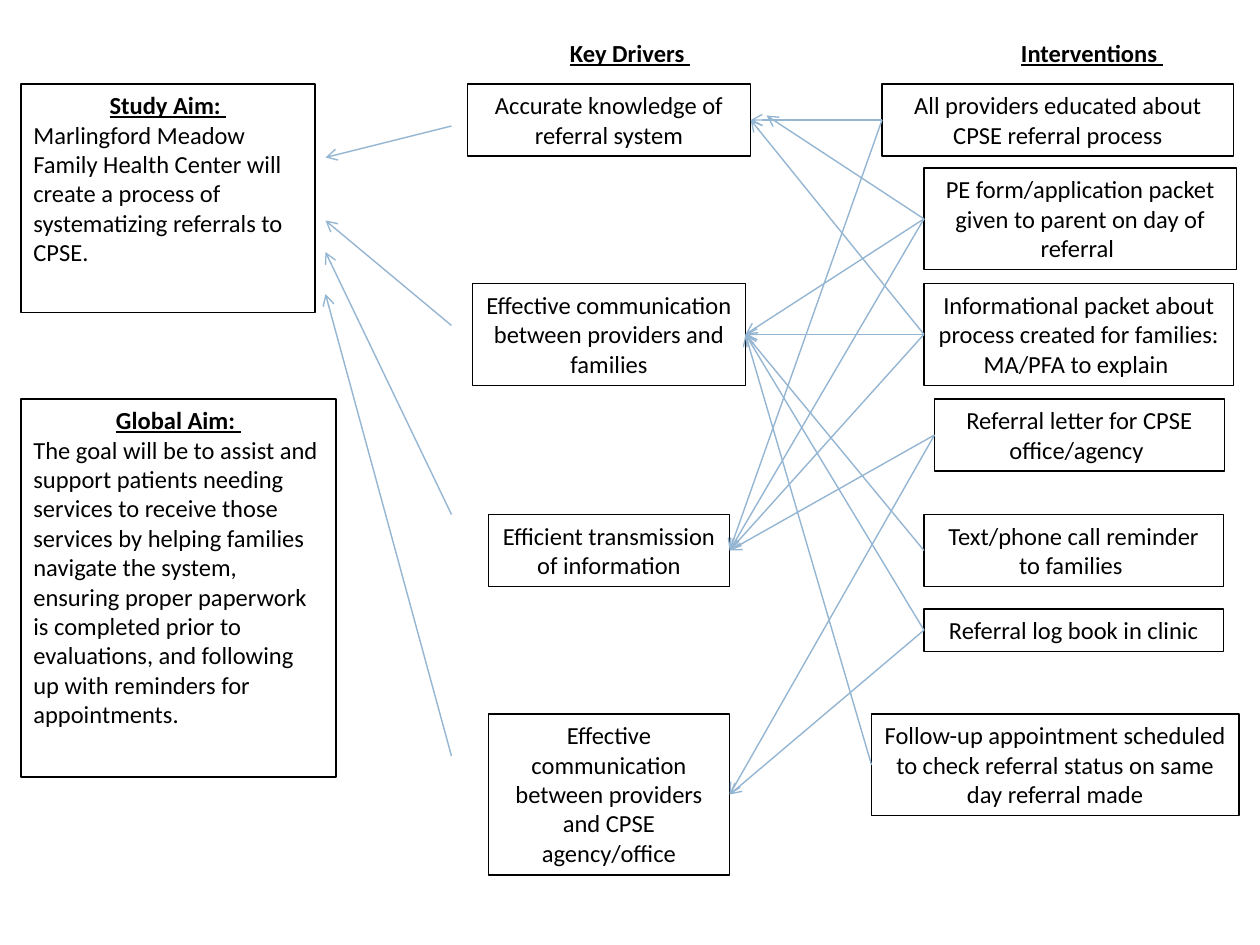
from lxml import etree
from pptx import Presentation
from pptx import util as u
from pptx.dml.color import RGBColor
from pptx.enum import shapes, text
from pptx.oxml import ns

BLACK = RGBColor(0, 0, 0)
BLUE = RGBColor(0x94, 0xB6, 0xD2)
UNIT = u.Inches(1) // 12
LEFT, RIGHT = 1, 3

AIMS = [
    (0, 28, 21.8, "Study Aim: ",
     "Marlingford Meadow Family Health Center will create a process of "
     "systematizing referrals to CPSE."),
    (30, 30, 36, "Global Aim: ",
     "The goal will be to assist and support patients needing services to "
     "receive those services by helping families navigate the system, "
     "ensuring proper paperwork is completed prior to evaluations, and "
     "following up with reminders for appointments."),
]
DRIVERS = [
    (5, 27, 2, "Accurate knowledge of referral system"),
    (24, 26, 3, "Effective communication between providers and families"),
    (46, 23, 2, "Efficient transmission of information"),
    (65, 23, 5, "Effective communication between providers and CPSE agency/office"),
]
ACTIONS = [
    (1, 5, 33.5, 2, "All providers educated about CPSE referral process"),
    (5, 13, 29.75, 3, "PE form/application packet given to parent on day of referral "),
    (5, 24, 29.5, 3, "Informational packet about process created for families: "
     "MA/PFA to explain "),
    (6, 35, 27.6, 2, "Referral letter for CPSE office/agency "),
    (5, 46, 28.5, 2, "Text/phone call reminder to families "),
    (5, 55, 28.5, 1, "Referral log book in clinic"),
    (0, 65, 35, 3, "Follow-up appointment scheduled to check referral status "
     "on same day referral made"),
]
LINKS = {0: (0, 2), 1: (1, 2, 4, 5, 6), 2: (0, 1, 2, 3), 3: (3, 5)}


def grid(*vals):
    """Turn grid steps into slide lengths."""
    return [u.Emu(round(v * UNIT)) for v in vals]


def tall(lines):
    """Give the height in grid steps of a box with this many lines."""
    return 1.2 + 2.83 * lines


def write(frame, words, bold=False, center=True, first=True):
    """Add one paragraph with one run."""
    para = frame.paragraphs[0] if first else frame.add_paragraph()
    para.alignment = text.PP_ALIGN.CENTER if center else text.PP_ALIGN.LEFT
    run = para.add_run()
    run.text = words
    font = run.font
    font.name, font.size = "Calibri", u.Pt(14)
    font.bold = font.underline = bold
    font.color.rgb = BLACK


def card(slide, box):
    """Draw an outlined box ready for text."""
    rect = slide.shapes.add_shape(shapes.MSO_SHAPE.RECTANGLE, *grid(*box))
    rect.shadow.inherit = False
    rect.fill.background()
    rect.line.color.rgb = BLACK
    rect.line.width = u.Pt(0.75)
    rect.text_frame.word_wrap = True
    rect.text_frame.vertical_anchor = text.MSO_ANCHOR.TOP
    return rect


def title(slide, box, words):
    """Place a column heading."""
    frame = slide.shapes.add_textbox(*grid(*box)).text_frame
    frame.word_wrap = True
    write(frame, words, bold=True)


def arrow(slide, start=(0, 0), end=(0, 0)):
    """Draw a thin arrow between two grid points."""
    line = slide.shapes.add_connector(
        shapes.MSO_CONNECTOR.STRAIGHT, *grid(*start, *end))
    line.line.color.rgb = BLUE
    line.line.width = u.Pt(0.79)
    props = line.element.spPr
    etree.SubElement(props.find(ns.qn("a:ln")), ns.qn("a:tailEnd"), type="arrow")
    etree.SubElement(props, ns.qn("a:effectLst"))
    return line


def aims(slide, box):
    """Fill the column of aims."""
    x, y = box
    for down, wide, high, head, body in AIMS:
        frame = card(slide, (x, y + down, wide, high)).text_frame
        write(frame, head, bold=True)
        write(frame, body, center=False, first=False)


def drivers(slide, box):
    """Fill the column of drivers, each centred in it."""
    x, y, width = box
    title(slide, (x + 1.5, y, 28, tall(1)), "Key Drivers ")
    cards = []
    for down, wide, lines, words in DRIVERS:
        rect = card(slide, (x + (width - wide) / 2, y + down, wide, tall(lines)))
        write(rect.text_frame, words)
        cards.append(rect)
    return cards


def actions(slide, box):
    """Fill the column of interventions."""
    x, y = box
    title(slide, (x + 9, y, 24, tall(1)), "Interventions ")
    cards = []
    for right, down, wide, lines, words in ACTIONS:
        rect = card(slide, (x + right, y + down, wide, tall(lines)))
        write(rect.text_frame, words)
        cards.append(rect)
    return cards


def goals(slide, box):
    """Point the drivers at the aims across a gap."""
    x, y, width = box
    for start, end in ((0, 3), (19, 9), (37, 12), (60, 16)):
        arrow(slide, (x + width, y + start), (x, y + end))


def links(slide, causes, steps):
    """Join interventions to the drivers they serve."""
    for goal, parts in LINKS.items():
        for part in parts:
            line = arrow(slide)
            line.begin_connect(steps[part], LEFT)
            line.end_connect(causes[goal], RIGHT)
    arrow(slide, end=(73, 11)).begin_connect(steps[1], LEFT)


def main():
    """Build and save the slide."""
    deck = Presentation()
    deck.slide_width, deck.slide_height = grid(120, 90)
    slide = deck.slides.add_slide(deck.slide_layouts[6])
    aims(slide, (2, 8))
    causes = drivers(slide, (44.5, 3, 27))
    steps = actions(slide, (83, 3))
    goals(slide, (31, 12, 12))
    links(slide, causes, steps)
    deck.save("out.pptx")


if __name__ == "__main__":
    main()
